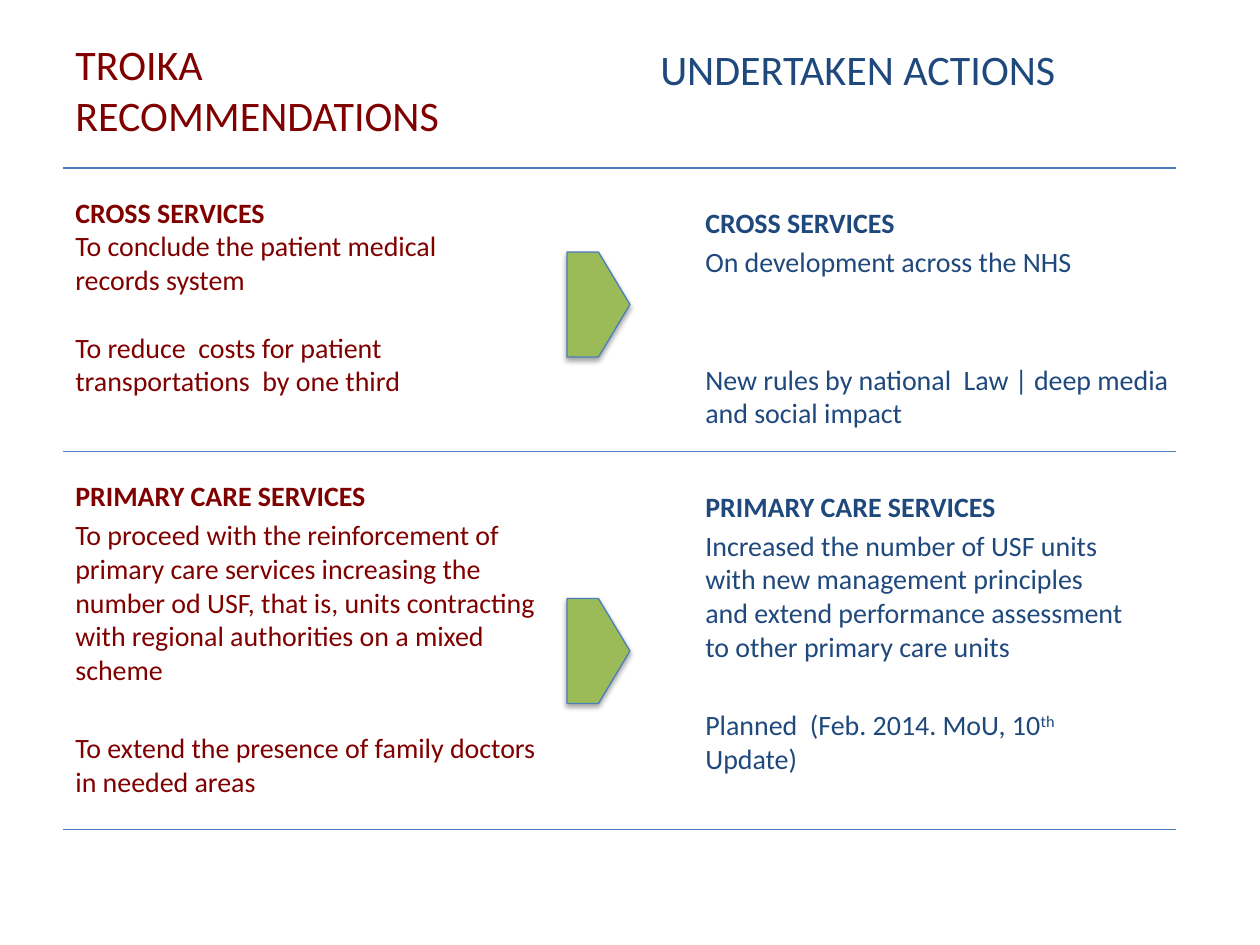
from dataclasses import dataclass

from lxml import etree
from pptx import Presentation
from pptx.dml.color import RGBColor
from pptx.enum.shapes import MSO_CONNECTOR as Connector, MSO_SHAPE as Shape
from pptx.enum.text import PP_ALIGN as Align
from pptx.oxml import parse_xml
from pptx.oxml.ns import nsdecls, qn
from pptx.slide import Slide
from pptx.util import Inches, Length, Pt

COLORS = {"troika": "800000", "action": "1F497D", "line": "4B7EBC", "arrow": "9BBB59"}
FONT = "Calibri"
COLUMNS, ROWS = 120, 90  # grid cells across and down the slide
WIDTH, HEIGHT = Inches(10), Inches(7.5)

RULE_ROWS = (16, 43, 79)
RULE_COLUMNS = (6, 112)
ARROW_ROWS = (24, 57)
ARROW_COLUMN, ARROW_WIDTH, ARROW_HEIGHT = 54, 6, 10


@dataclass(frozen=True)
class Area:
    column: float
    row: float
    columns: float
    rows: float


@dataclass(frozen=True)
class Line:
    text: str
    before: float = 0
    superscript: str = ""
    tail: str = ""


@dataclass(frozen=True)
class Block:
    area: Area
    color: str
    lines: tuple[Line, ...]
    size: float = 16
    headed: bool = True
    align: Align = Align.LEFT


BLOCKS = (
    Block(Area(6, 3.1, 47.4, 12), "troika", (Line("TROIKA RECOMMENDATIONS"),),
          size=24, headed=False),
    Block(Area(57.6, 3.6, 48.2, 12), "action", (Line("UNDERTAKEN ACTIONS"),),
          size=24, headed=False, align=Align.CENTER),
    Block(Area(6, 18, 44, 21), "troika", (
        Line("CROSS SERVICES"),
        Line("To conclude the patient medical records system"),
        Line("To reduce  costs for patient transportations  by one third", 19.5),
    )),
    Block(Area(66, 19, 48, 24), "action", (
        Line("CROSS SERVICES"),
        Line("On development across the NHS", 3.2),
        Line("New rules by national  Law | deep media and social impact", 48),
    )),
    Block(Area(6, 45, 47, 34), "troika", (
        Line("PRIMARY CARE SERVICES"),
        Line("To proceed with the reinforcement of primary care services increasing the "
             "number od USF, that is, units contracting with regional authorities on a "
             "mixed scheme", 3.2),
        Line("To extend the presence of family doctors in needed areas", 25.6),
    )),
    Block(Area(66, 46, 43, 34), "action", (
        Line("PRIMARY CARE SERVICES"),
        Line("Increased the number of USF units with new management principles and "
             "extend performance assessment to other primary care units", 3.2),
        Line("Planned  (Feb. 2014. MoU, 10", 25.6, "th", " Update)"),
    )),
)


def across(columns: float) -> Length:
    return Length(round(WIDTH * columns / COLUMNS))


def down(rows: float) -> Length:
    return Length(round(HEIGHT * rows / ROWS))


def place(area: Area) -> tuple[Length, Length, Length, Length]:
    return across(area.column), down(area.row), across(area.columns), down(area.rows)


def rgb(name: str) -> RGBColor:
    return RGBColor.from_string(COLORS[name])


def add_block(page: Slide, block: Block) -> None:
    frame = page.shapes.add_textbox(*place(block.area)).text_frame
    frame.word_wrap = True
    for index, line in enumerate(block.lines):
        para = frame.paragraphs[0] if index == 0 else frame.add_paragraph()
        para.alignment = block.align
        para.space_before = Pt(line.before)
        para.font.name = FONT
        para.font.size = Pt(block.size)
        para.font.bold = block.headed and index == 0
        para.font.color.rgb = rgb(block.color)
        para.add_run().text = line.text
        if line.superscript:
            span = para.add_run()
            span.text = line.superscript
            span._r.get_or_add_rPr().set("baseline", "30000")
            para.add_run().text = line.tail


def add_rule(page: Slide, row: float) -> None:
    start, end = map(across, RULE_COLUMNS)
    rule = page.shapes.add_connector(Connector.STRAIGHT, start, down(row), end, down(row))
    rule.line.color.rgb = rgb("line")
    rule.line.width = Pt(0.75)
    etree.SubElement(rule._element.spPr, qn("a:effectLst"))


def add_arrow(page: Slide, row: float) -> None:
    area = Area(ARROW_COLUMN, row, ARROW_WIDTH, ARROW_HEIGHT)
    arrow = page.shapes.add_shape(Shape.PENTAGON, *place(area))
    arrow.fill.solid()
    arrow.fill.fore_color.rgb = rgb("arrow")
    arrow.line.color.rgb = rgb("line")
    arrow.line.width = Pt(0.75)
    arrow.shadow.inherit = False
    arrow._element.spPr.find(qn("a:effectLst")).append(parse_xml(
        f'<a:outerShdw {nsdecls("a")} blurRad="{Pt(3.1)}" dist="{Pt(1.8)}" '
        'dir="5400000" rotWithShape="0"><a:srgbClr val="000000">'
        '<a:alpha val="35000"/></a:srgbClr></a:outerShdw>'))


def main() -> None:
    deck = Presentation()
    deck.slide_width, deck.slide_height = WIDTH, HEIGHT
    page = deck.slides.add_slide(deck.slide_layouts[6])
    for block in BLOCKS:
        add_block(page, block)
    for row in RULE_ROWS:
        add_rule(page, row)
    for row in ARROW_ROWS:
        add_arrow(page, row)
    deck.save("out.pptx")


if __name__ == "__main__":
    main()
